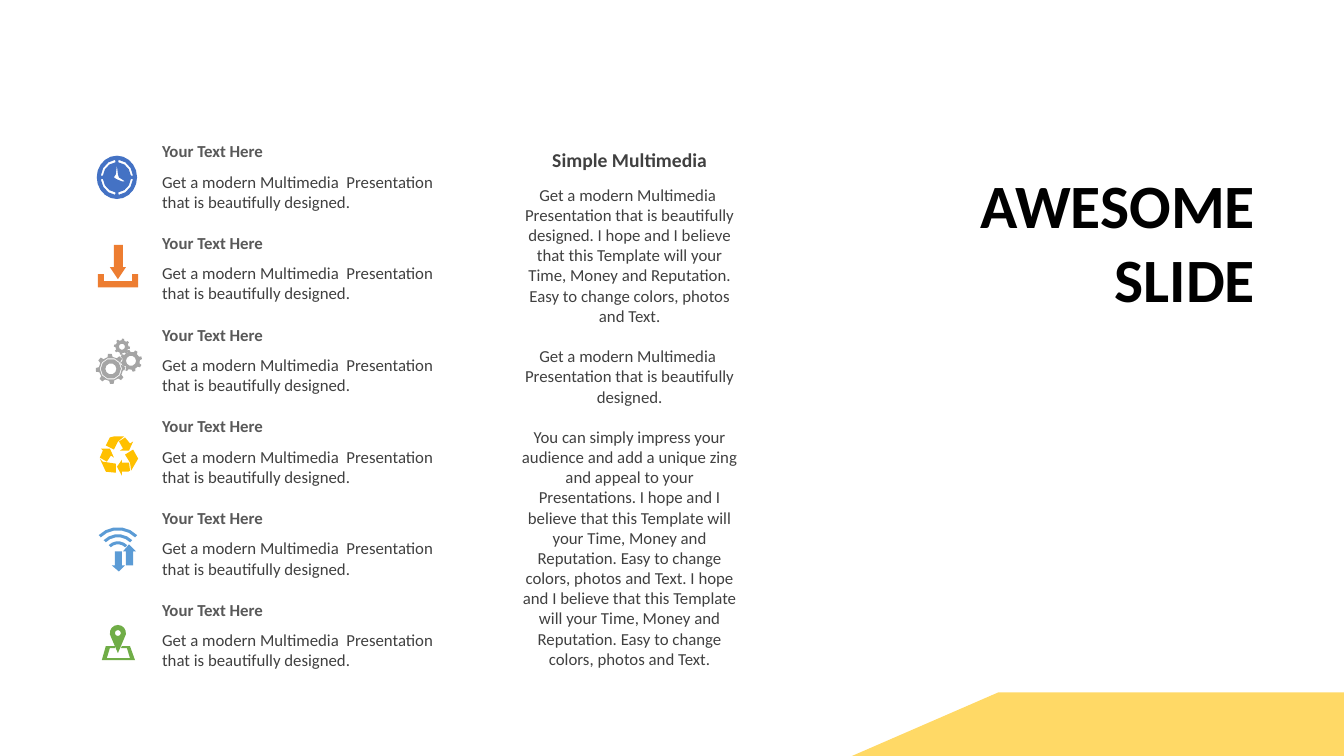
"""Build the slide with six icon captions, a text column and a title."""
from math import cos, radians, sin

from lxml.etree import SubElement
from pptx import Presentation
from pptx.dml.color import RGBColor
from pptx.enum.text import MSO_ANCHOR, MSO_AUTO_SIZE, PP_ALIGN
from pptx.oxml.ns import qn
from pptx.util import Inches, Pt

FONT = "Calibri"
THEME = {
    "colors": {
        "blue": "4472C4", "orange": "ED7D31", "gray": "A5A5A5", "gold": "FFC000",
        "sky": "5B9BD5", "green": "70AD47", "band": "FFD966",
        "black": "000000", "dark": "404040", "medium": "595959",
    },
    "text": {
        "title": ("black", PP_ALIGN.RIGHT, {"name": FONT, "size": Pt(44), "bold": True}),
        "heading": ("dark", PP_ALIGN.CENTER, {"name": FONT, "size": Pt(14), "bold": True}),
        "column": ("dark", PP_ALIGN.CENTER, {"name": FONT, "size": Pt(12), "bold": False}),
        "label": ("medium", PP_ALIGN.LEFT, {"name": FONT, "size": Pt(12), "bold": True}),
        "caption": ("dark", PP_ALIGN.LEFT, {"name": FONT, "size": Pt(12), "bold": False}),
    },
}
PITCH = "Get a modern Multimedia  Presentation that is beautifully designed."
HOPE = ("I hope and I believe that this Template will your Time, Money and Reputation. "
        "Easy to change colors, photos and Text.")
IMPRESS = "You can simply impress your audience and add a unique zing and appeal to your Presentations."


def arc(center, radius_x, radius_y, start=0, end=360, steps=10):
    """Return points along an elliptical arc, in degrees clockwise from the right."""
    angles = [radians(start + (end - start) * step / steps) for step in range(steps + 1)]
    return [(center[0] + radius_x * cos(a), center[1] + radius_y * sin(a)) for a in angles]


def write(box, bounds, lines, style):
    """Place a text shape and fill it with styled paragraphs."""
    color, align, font_format = THEME["text"][style]
    for side, length in zip(("left", "top", "width", "height"), bounds):
        setattr(box, side, Inches(length))
    frame = box.text_frame
    frame.word_wrap = True
    frame.auto_size = MSO_AUTO_SIZE.NONE
    for number, line in enumerate(lines):
        para = frame.add_paragraph() if number else frame.paragraphs[0]
        para.alignment = align
        para.space_before = Pt(0)
        span = para.add_run()
        span.text = line
        for name, value in font_format.items():
            setattr(span.font, name, value)
        span.font.color.rgb = RGBColor.from_string(THEME["colors"][color])


deck = Presentation()
deck.slide_width, deck.slide_height = Inches(13.33), Inches(7.5)
page = deck.slides.add_slide(deck.slide_layouts[1])
title, column = page.placeholders

write(title, (9, 1.6, 3.55, 1.58), ["AWESOME", "SLIDE"], "title")
title.text_frame.vertical_anchor = MSO_ANCHOR.MIDDLE

write(column, (5.02, 1.78, 2.45, 5.15),
      [f"{PITCH} {HOPE}", PITCH, f"{IMPRESS} {HOPE} {HOPE}"], "column")
for para in column.text_frame.paragraphs:
    para.space_after = Pt(14.5)
    properties = para._p.get_or_add_pPr()
    properties.set("marL", "0")
    properties.set("indent", "0")
    SubElement(properties, qn("a:buNone"))

captions = [((5.02, 1.42, 2.45, 0.34), "Simple Multimedia", "heading")]
for row in range(6):
    top = 1.35 + 0.91 * row
    captions.append(((1.51, top, 3.15, 0.3), "Your Text Here", "label"))
    captions.append(((1.51, top + 0.3, 3.18, 0.5), PITCH, "caption"))
for bounds, line, style in captions:
    write(page.shapes.add_textbox(0, 0, 0, 0), bounds, [line], style)

dial = (1.16, 1.76)
clock = [
    arc(dial, 0.2, 0.215, steps=20),
    [(1.16, 1.64), (1.17, 1.73), (1.18, 1.76), (1.24, 1.8), (1.21, 1.8),
     (1.16, 1.78), (1.13, 1.76), (1.15, 1.73)],
]
for quarter in range(0, 360, 90):
    clock.append(arc(dial, 0.16, 0.175, quarter + 6, quarter + 84, 3)
                 + arc(dial, 0.14, 0.15, quarter + 84, quarter + 6, 3))

download = [
    [(0.97, 2.72), (1.03, 2.72), (1.03, 2.79), (1.31, 2.79),
     (1.31, 2.72), (1.37, 2.72), (1.37, 2.85), (0.97, 2.85)],
    [(1.13, 2.43), (1.22, 2.43), (1.22, 2.65), (1.25, 2.65), (1.17, 2.77), (1.09, 2.65), (1.13, 2.65)],
]

gears = []
for center, tip, phase, rings in [
    ((1.1, 3.66), 0.15, -4, (0.11, 0.1, 0.055)),
    ((1.3, 3.58), 0.11, -16, (0.05,)),
    ((1.21, 3.44), 0.08, 8, (0.03,)),
]:
    outline = []
    for tooth in range(phase, phase + 360, 45):
        outline += arc(center, tip, tip, tooth - 7, tooth + 7, 1)
        outline += arc(center, tip * 0.8, tip * 0.8, tooth + 12, tooth + 33, 1)
    gears.append(outline)
    gears += [arc(center, ring, ring) for ring in rings]

recycle = [
    [(1.21, 4.56), (1.21, 4.59), (1.28, 4.59), (1.29, 4.67), (1.27, 4.68),
     (1.21, 4.68), (1.21, 4.72), (1.16, 4.63)],
    [(0.99, 4.55), (1.02, 4.58), (1.15, 4.6), (1.15, 4.69), (1.05, 4.68)],
    [(1.32, 4.46), (1.37, 4.55), (1.3, 4.67), (1.29, 4.59), (1.24, 4.51)],
    [(1, 4.45), (1.09, 4.45), (1.13, 4.54), (1.1, 4.52), (1.06, 4.58), (0.99, 4.54), (1.02, 4.47)],
    [(1.24, 4.34), (1.29, 4.4), (1.32, 4.38), (1.28, 4.47), (1.19, 4.47), (1.22, 4.45), (1.18, 4.38)],
    [(1.13, 4.33), (1.23, 4.33), (1.17, 4.38), (1.13, 4.46), (1.05, 4.42), (1.09, 4.34)],
]

signal = [
    [(1.14, 5.47), (1.21, 5.47), (1.21, 5.61), (1.24, 5.61), (1.18, 5.67), (1.11, 5.61), (1.14, 5.61)],
    [(1.28, 5.4), (1.35, 5.47), (1.32, 5.47), (1.32, 5.61), (1.25, 5.61), (1.25, 5.47), (1.22, 5.47)],
]
for radius in (0.27, 0.2, 0.13):
    inner = radius - 0.03
    signal.append(arc((1.17, 5.5), radius, radius, 225, 315, 5)
                  + arc((1.17, 5.5), inner, inner, 315, 225, 5))

pin = (1.17, 6.28)
location = [
    [(1.05, 6.41), (1.14, 6.41), (1.14, 6.43), (1.09, 6.43), (1.06, 6.53), (1.29, 6.53),
     (1.26, 6.43), (1.2, 6.43), (1.21, 6.41), (1.29, 6.41), (1.34, 6.55), (1.01, 6.55)],
    arc(pin, 0.08, 0.08, 145, 395) + [(1.17, 6.48)],
    arc(pin, 0.03, 0.03, steps=8),
]

band = [[(13.33, 7.5), (8.45, 7.5), (9.9, 6.87), (13.33, 6.87)]]

for contours, color in [
    (clock, "blue"), (download, "orange"), (gears, "gray"), (recycle, "gold"),
    (signal, "sky"), (location, "green"), (band, "band"),
]:
    builder = None
    for contour in contours:
        first, *rest = [(Inches(x), Inches(y)) for x, y in contour]
        if builder is None:
            builder = page.shapes.build_freeform(*first)
        else:
            builder.move_to(*first)
        builder.add_line_segments(rest, close=True)
    drawing = builder.convert_to_shape()
    drawing.shadow.inherit = False
    drawing.fill.solid()
    drawing.fill.fore_color.rgb = RGBColor.from_string(THEME["colors"][color])
    drawing.line.fill.background()

deck.save("out.pptx")
